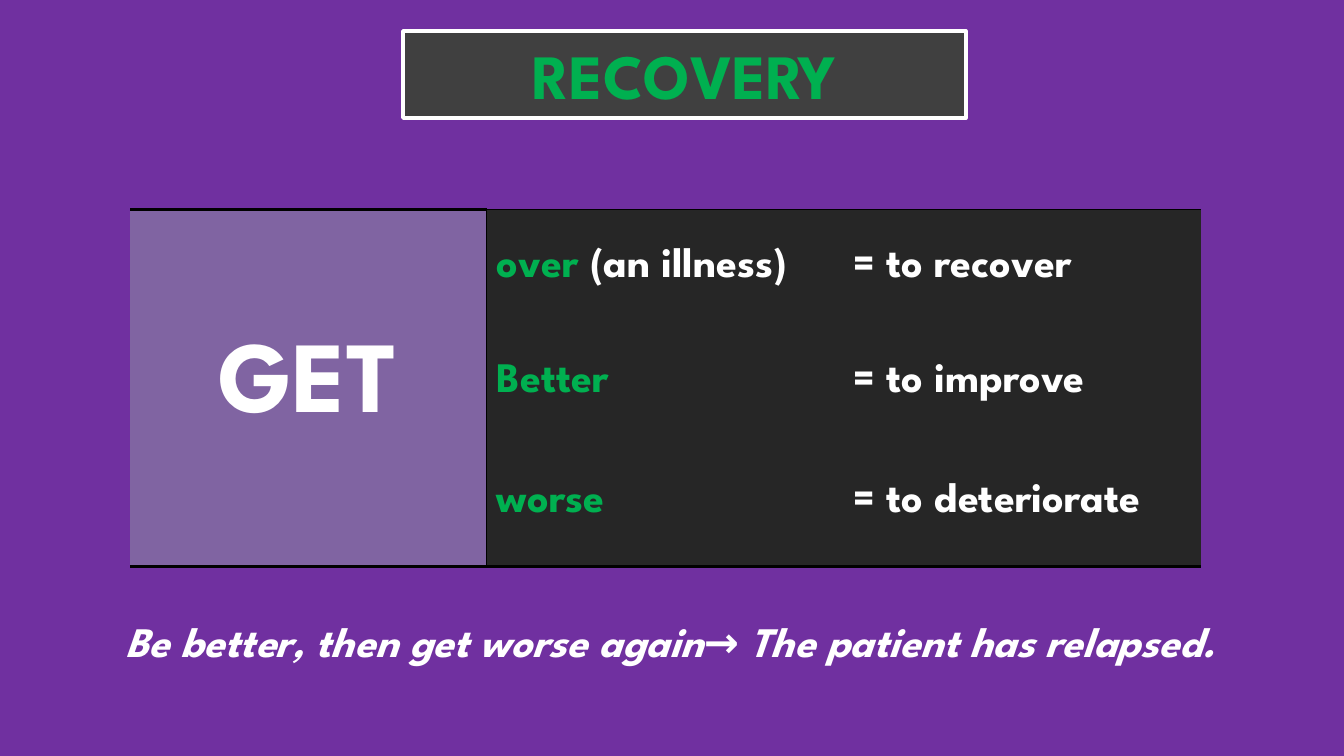
from lxml import etree
from pptx import Presentation
from pptx.dml.color import RGBColor
from pptx.enum.shapes import MSO_SHAPE
from pptx.enum.text import MSO_ANCHOR, PP_ALIGN
from pptx.oxml.ns import qn
from pptx.util import Pt

RECTANGLE = MSO_SHAPE.RECTANGLE
MIDDLE = MSO_ANCHOR.MIDDLE
CENTER = PP_ALIGN.CENTER

THEME = {
    "font": "League Spartan",
    "background": "7030A0",
    "banner": "404040",
    "verb": "8064A2",
    "meaning": "262626",
    "white": "FFFFFF",
    "green": "00B050",
    "border": "000000",
    "title_size": 45,
    "verb_size": 72,
    "body_size": 30,
}


def add_line(parent, tag, color, width, index):
    line = etree.Element(qn(tag), w=str(Pt(width)))
    if width:
        fill = etree.SubElement(line, qn("a:solidFill"))
        etree.SubElement(fill, qn("a:srgbClr"), val=THEME[color])
    else:
        etree.SubElement(line, qn("a:noFill"))
    parent.insert(index, line)


def style_run(run, size, color, italic=None):
    run.font.name = THEME["font"]
    run.font.size = Pt(THEME[size])
    run.font.bold = True
    run.font.italic = italic
    run.font.color.rgb = RGBColor.from_string(THEME[color])
    if color == "green":
        add_line(run.font._element, "a:ln", color, 0.75, 0)


deck = Presentation()
deck.slide_width, deck.slide_height = Pt(960), Pt(540)
slide = deck.slides.add_slide(deck.slide_layouts[6])
slide.background.fill.solid()
slide.background.fill.fore_color.rgb = RGBColor.from_string(THEME["background"])

phrases = [
    ("over", " (an illness)", "= to recover"),
    ("Better", "", "= to improve"),
    ("worse", "", "= to deteriorate"),
]
row_heights = [83.5, 80.6, 90.9]
column_width = 254.9
last_row = len(phrases) - 1

phrase_table = slide.shapes.add_table(
    len(phrases), 3, Pt(92.9), Pt(149.6), Pt(3 * column_width), Pt(sum(row_heights))
).table
phrase_table.first_row = False
phrase_table.horz_banding = False
for column in phrase_table.columns:
    column.width = Pt(column_width)
for row, height in zip(phrase_table.rows, row_heights):
    row.height = Pt(height)

verb_cell = phrase_table.cell(0, 0)
verb_cell.merge(phrase_table.cell(last_row, 0))
verb_cell.text_frame.text = "GET"
verb_cell.text_frame.paragraphs[0].alignment = CENTER
style_run(verb_cell.text_frame.paragraphs[0].runs[0], "verb_size", "white")

for row, (keyword, detail, meaning) in enumerate(phrases):
    phrase = phrase_table.cell(row, 1).text_frame.paragraphs[0]
    phrase.text = keyword
    style_run(phrase.runs[0], "body_size", "green")
    if detail:
        detail_run = phrase.add_run()
        detail_run.text = detail
        style_run(detail_run, "body_size", "white")
    definition = phrase_table.cell(row, 2).text_frame.paragraphs[0]
    definition.text = meaning
    style_run(definition.runs[0], "body_size", "white")

    for column in range(3):
        cell = phrase_table.cell(row, column)
        cell.vertical_anchor = MIDDLE
        cell.fill.solid()
        cell.fill.fore_color.rgb = RGBColor.from_string(
            THEME["meaning" if column else "verb"]
        )
        top = 1 if column else 2
        borders = {
            "a:lnL": 1 if column == 1 else 0,
            "a:lnR": 1 if column == 0 else 0,
            "a:lnT": top if row == 0 else 0,
            "a:lnB": 2 if row == last_row or cell.is_merge_origin else 0,
        }
        for index, (side, width) in enumerate(borders.items()):
            add_line(cell._tc.get_or_add_tcPr(), side, "border", width, index)

banner = slide.shapes.add_shape(RECTANGLE, Pt(288), Pt(22.3), Pt(401.8), Pt(61.9))
banner.shadow.inherit = False
banner.fill.solid()
banner.fill.fore_color.rgb = RGBColor.from_string(THEME["banner"])
banner.line.color.rgb = RGBColor.from_string(THEME["white"])
banner.line.width = Pt(3)
banner.text_frame.text = "RECOVERY"
banner.text_frame.paragraphs[0].alignment = CENTER
style_run(banner.text_frame.paragraphs[0].runs[0], "title_size", "green")

relapse = slide.shapes.add_textbox(Pt(35.3), Pt(436.3), Pt(887.8), Pt(43.9))
relapse.text_frame.word_wrap = True
relapse.text_frame.text = "Be better, then get worse again→ The patient has relapsed."
relapse.text_frame.paragraphs[0].alignment = CENTER
style_run(relapse.text_frame.paragraphs[0].runs[0], "body_size", "white", True)

deck.save("out.pptx")
